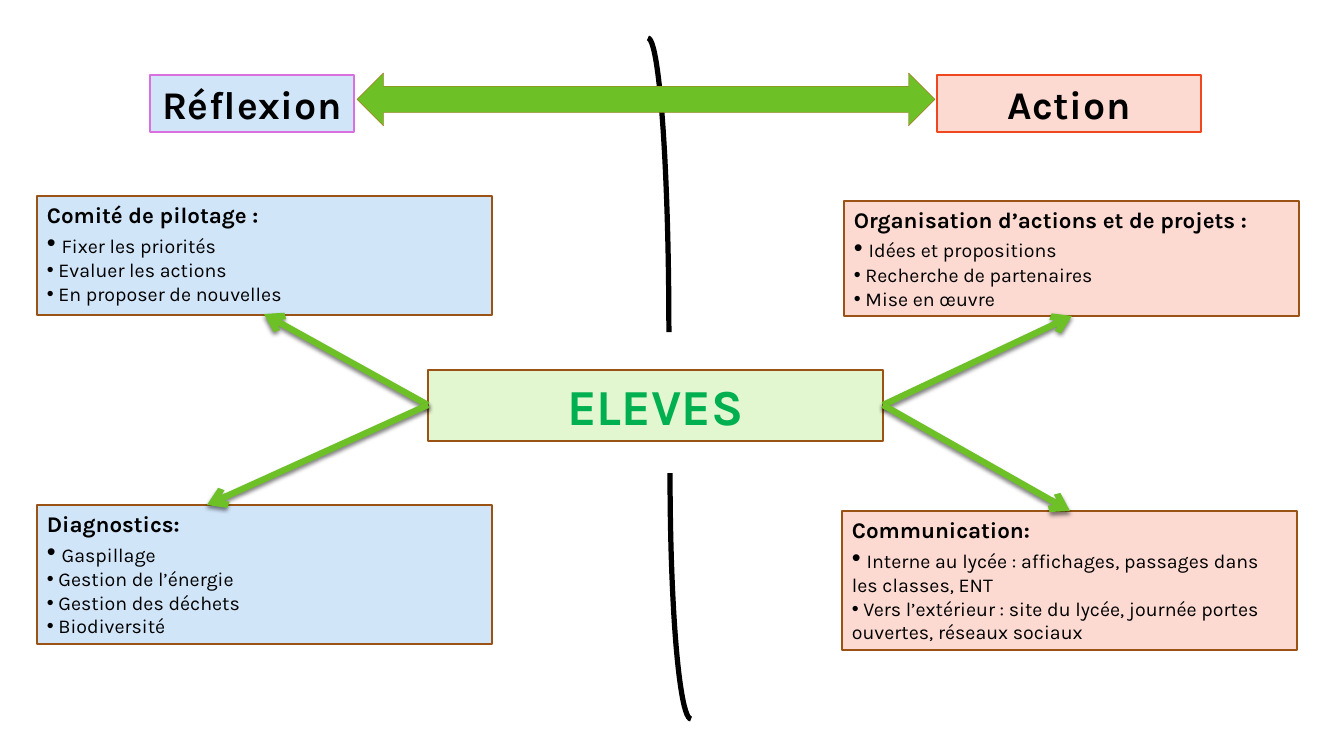
from lxml.etree import SubElement as Sub
from pptx import Presentation
from pptx.dml.color import RGBColor as Rgb
from pptx.enum.shapes import MSO_CONNECTOR as Link, MSO_SHAPE as Shape
from pptx.enum.text import MSO_ANCHOR as Anchor, MSO_AUTO_SIZE as Fit, PP_ALIGN as Align
from pptx.oxml.ns import qn
from pptx.util import Emu, Pt

FONT = "Karla"
HEX = {
    "black": "000000", "blue": "D1E5F9", "pink": "FCDAD2", "mint": "E2F6D0",
    "green": "6DC025", "leaf": "00B050", "brown": "9A5315", "rust": "B45813",
    "violet": "DA6FDF", "red": "F1471F",
}

# Lengths in px; boxes are left, top, width, height
WIDE = 455
CARDS = [
    ((37, 196, WIDE, 119), "blue", "Comité de pilotage :",
     ["Fixer les priorités", "Evaluer les actions", "En proposer de nouvelles"]),
    ((844, 201, WIDE, 115), "pink", "Organisation d’actions et de projets :",
     ["Idées et propositions", "Recherche de partenaires", "Mise en œuvre"]),
    ((37, 505, WIDE, 139), "blue", "Diagnostics:",
     ["Gaspillage", "Gestion de l’énergie", "Gestion des déchets", "Biodiversité"]),
    ((842, 511, WIDE, 139), "pink", "Communication:",
     ["Interne au lycée : affichages, passages dans les classes, ENT",
      "Vers l’extérieur : site du lycée, journée portes ouvertes, réseaux sociaux"]),
]
HUB = (428, 370, WIDE, 71)
TIPS = [(264, 314), (207, 505), (1072, 316), (1070, 511)]
ARCS = [((627, 38, 42, 588), 0), ((670, 227, 42, 492), 180)]
HEADS = [
    ("Réflexion", (150, 75, 204, 57), "blue", "violet", False),
    ("Action", (937, 75, 264, 57), "pink", "red", True),
]
SPAN = (357, 73, 578, 53)


def px(n):
    return Emu(round(n * 914400 / 100.8))


def rgb(name):
    return Rgb.from_string(HEX[name])


def draw(kind, box, fill, line, width=1):
    shape = slide.shapes.add_shape(kind, *map(px, box))
    shape.shadow.inherit = False
    if fill:
        shape.fill.solid()
        shape.fill.fore_color.rgb = rgb(fill)
    else:
        shape.fill.background()
    shape.line.color.rgb = rgb(line)
    shape.line.width = Pt(width)
    return shape


def panel(box, fill, line="brown", wrap=True):
    """Draw a rectangle and return its text frame."""
    frame = draw(Shape.RECTANGLE, box, fill, line).text_frame
    frame.word_wrap = wrap
    frame.auto_size = Fit.SHAPE_TO_FIT_TEXT
    frame.vertical_anchor = Anchor.TOP
    return frame


def style(para, size, bold=True, color="black", align=Align.LEFT):
    para.alignment = align
    font = para.font
    font.name, font.size, font.bold = FONT, Pt(size), bold
    font.color.rgb = rgb(color)


def bullet(para):
    props = para._p.get_or_add_pPr()
    props.set("marL", "0")
    props.set("indent", "0")
    Sub(props, qn("a:buFont"), typeface="Arial")
    Sub(props, qn("a:buChar"), char="•")


def card(box, fill, title, items):
    frame = panel(box, fill)
    top = frame.paragraphs[0]
    top.add_run().text = title
    style(top, 16)
    for i, item in enumerate(items):
        para = frame.add_paragraph()
        bullet(para)
        style(para, 14, bold=False)
        if i == 0:
            gap = para.add_run()
            gap.text = " "
            gap.font.size = Pt(18)
            para.add_run().text = item
        else:
            para.add_run().text = " " + item


def label(frame, text, size, color="black"):
    para = frame.paragraphs[0]
    run = para.add_run()
    run.text = text
    style(para, size, color=color, align=Align.CENTER)
    return run


def arrow(start, end):
    link = slide.shapes.add_connector(Link.STRAIGHT, *map(px, start + end))
    link.line.color.rgb = rgb("green")
    link.line.width = Pt(4.5)
    Sub(link.line._get_or_add_ln(), qn("a:tailEnd"), type="arrow")
    effect = Sub(link._element.spPr, qn("a:effectLst"))
    shade = Sub(effect, qn("a:outerShdw"), blurRad=str(Pt(3)), dist=str(Pt(2)),
                dir="5400000", rotWithShape="0")
    tint = Sub(shade, qn("a:srgbClr"), val=HEX["black"])
    Sub(tint, qn("a:alpha"), val="50000")


deck = Presentation()
deck.slide_width, deck.slide_height = px(1344), px(756)
slide = deck.slides.add_slide(deck.slide_layouts[6])

for item in CARDS:
    card(*item)

label(panel(HUB, "mint"), "ELEVES", 36, "leaf")
left, top, width, height = HUB
for tip in TIPS:
    side = left if tip[0] < left else left + width
    arrow((side, top + height // 2), tip)

for box, turn in ARCS:
    draw(Shape.ARC, box, None, "black", 3.75).rotation = turn

for text, box, fill, line, wrap in HEADS:
    run = label(panel(box, fill, line, wrap), text, 28)
    run._r.get_or_add_rPr().set("spc", "50")

draw(Shape.LEFT_RIGHT_ARROW, SPAN, "green", "rust", 0.25)

deck.save("out.pptx")
